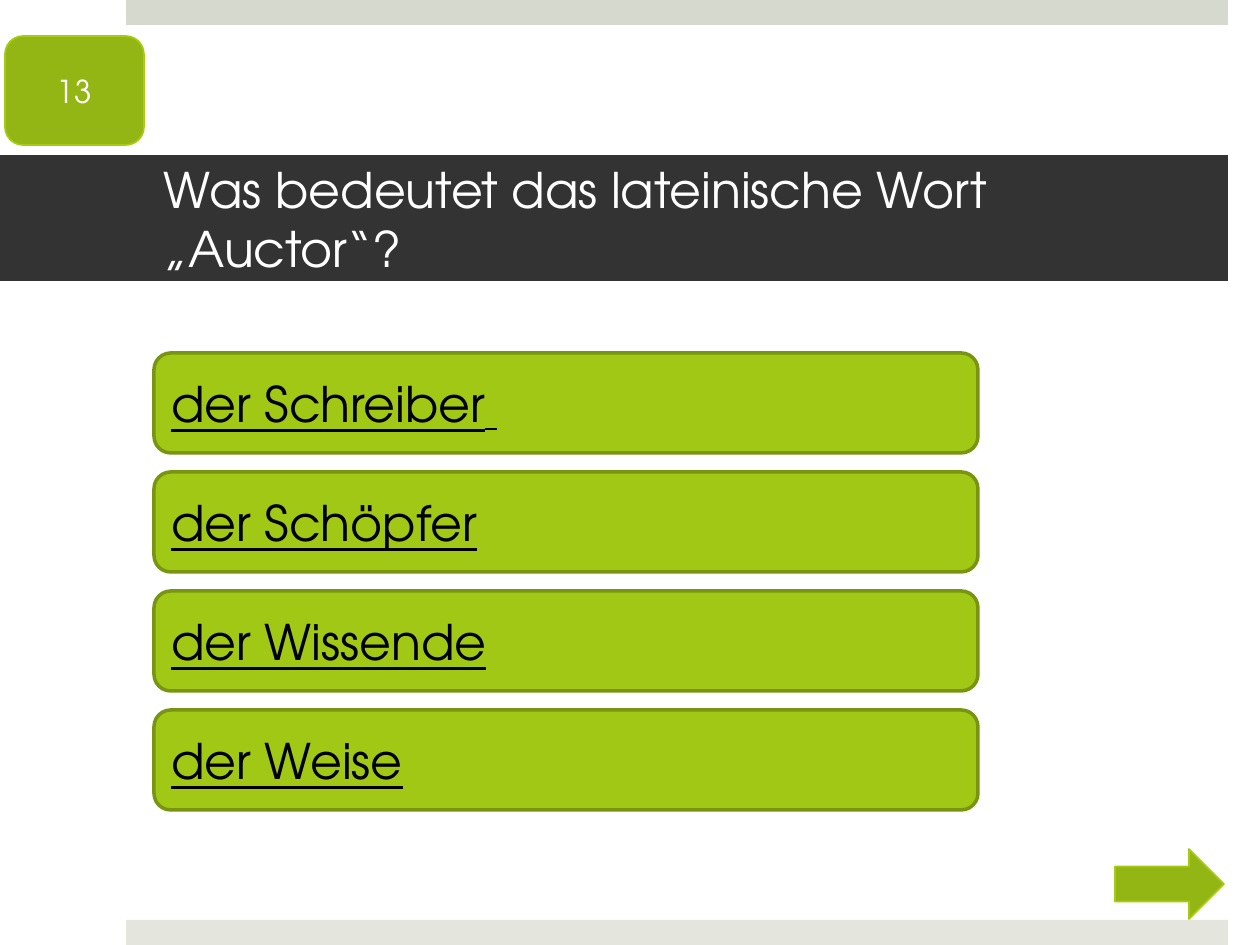
from pptx import Presentation
from pptx.dml.color import RGBColor
from pptx.enum.shapes import MSO_SHAPE
from pptx.enum.text import MSO_ANCHOR, MSO_AUTO_SIZE, PP_ALIGN
from pptx.util import Emu, Pt

SCALE = 914400 / 126


class Theme:
    font = "TeX Gyre Adventor"
    white, black = "FFFFFF", "000000"
    band = "333333"
    top_bar, bottom_bar = "D6D9CD", "E4E6DE"
    answer, answer_line = "A2C816", "789410"
    accent, accent_line = "93B614", "A5CC12"
    heading_size, small_size, number_size = 28, 24, 18


def px(n):
    return Emu(round(n * SCALE))


def set_attrs(obj, values):
    for name, value in values.items():
        setattr(obj, name, value)


def fill_shape(sp, color):
    sp.fill.solid()
    sp.fill.fore_color.rgb = RGBColor.from_string(color)


def add_shape(s, kind, box, fill, line=None, width=1):
    sp = s.shapes.add_shape(kind, *map(px, box))
    sp.shadow.inherit = False
    fill_shape(sp, fill)
    if line:
        sp.line.color.rgb = RGBColor.from_string(line)
        sp.line.width = Pt(width)
    else:
        sp.line.fill.background()
    return sp


def write_text(sp, runs, color, align=PP_ALIGN.LEFT, underline=False, **frame):
    tf = sp.text_frame
    set_attrs(tf, {"word_wrap": True, "auto_size": MSO_AUTO_SIZE.NONE,
                   "vertical_anchor": MSO_ANCHOR.MIDDLE, **frame})
    p = tf.paragraphs[0]
    p.alignment = align
    for text, size in runs:
        r = p.add_run()
        r.text = text
        set_attrs(r.font, {"name": Theme.font, "size": Pt(size), "underline": underline})
        r.font.color.rgb = RGBColor.from_string(color)


def add_title(s, text):
    sp = s.shapes.title
    set_attrs(sp, {"left": px(0), "top": px(155), "width": px(1228), "height": px(126)})
    fill_shape(sp, Theme.band)
    write_text(sp, [(text, Theme.heading_size)], Theme.white,
               margin_left=px(164), margin_right=px(38))


def add_answers(s, answers):
    for i, runs in enumerate(answers):
        sp = add_shape(s, MSO_SHAPE.ROUNDED_RECTANGLE, (154, 353 + 119 * i, 824, 100),
                       Theme.answer, Theme.answer_line, 2)
        write_text(sp, runs, Theme.black, underline=True)


def add_number(s, number):
    sp = add_shape(s, MSO_SHAPE.ROUNDED_RECTANGLE, (5, 36, 139, 109),
                   Theme.accent, Theme.accent_line)
    write_text(sp, [(number, Theme.number_size)], Theme.white, PP_ALIGN.CENTER)


def main():
    prs = Presentation()
    set_attrs(prs, {"slide_width": px(1260), "slide_height": px(945)})
    s = prs.slides.add_slide(prs.slide_layouts[5])
    for top, color in ((0, Theme.top_bar), (920, Theme.bottom_bar)):
        add_shape(s, MSO_SHAPE.RECTANGLE, (126, top, 1102, 25), color)
    add_title(s, "Was bedeutet das lateinische Wort „Auctor“?")
    size = Theme.heading_size
    add_answers(s, [
        [("der Schreiber", size), (" ", Theme.small_size)],
        [("der Schöpfer", size)],
        [("der Wissende", size)],
        [("der Weise", size)],
    ])
    add_number(s, "13")
    add_shape(s, MSO_SHAPE.RIGHT_ARROW, (1115, 849, 109, 70),
              Theme.accent, Theme.accent_line)
    prs.save("out.pptx")


if __name__ == "__main__":
    main()
